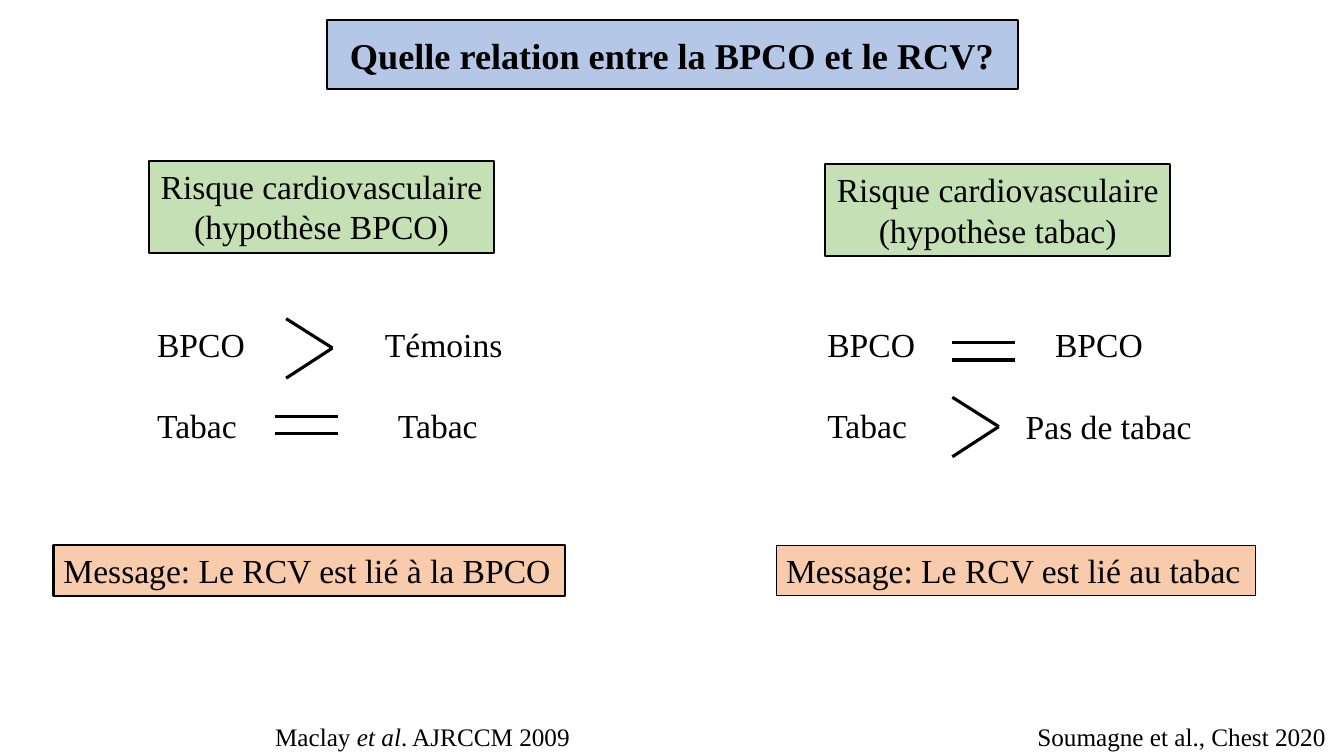
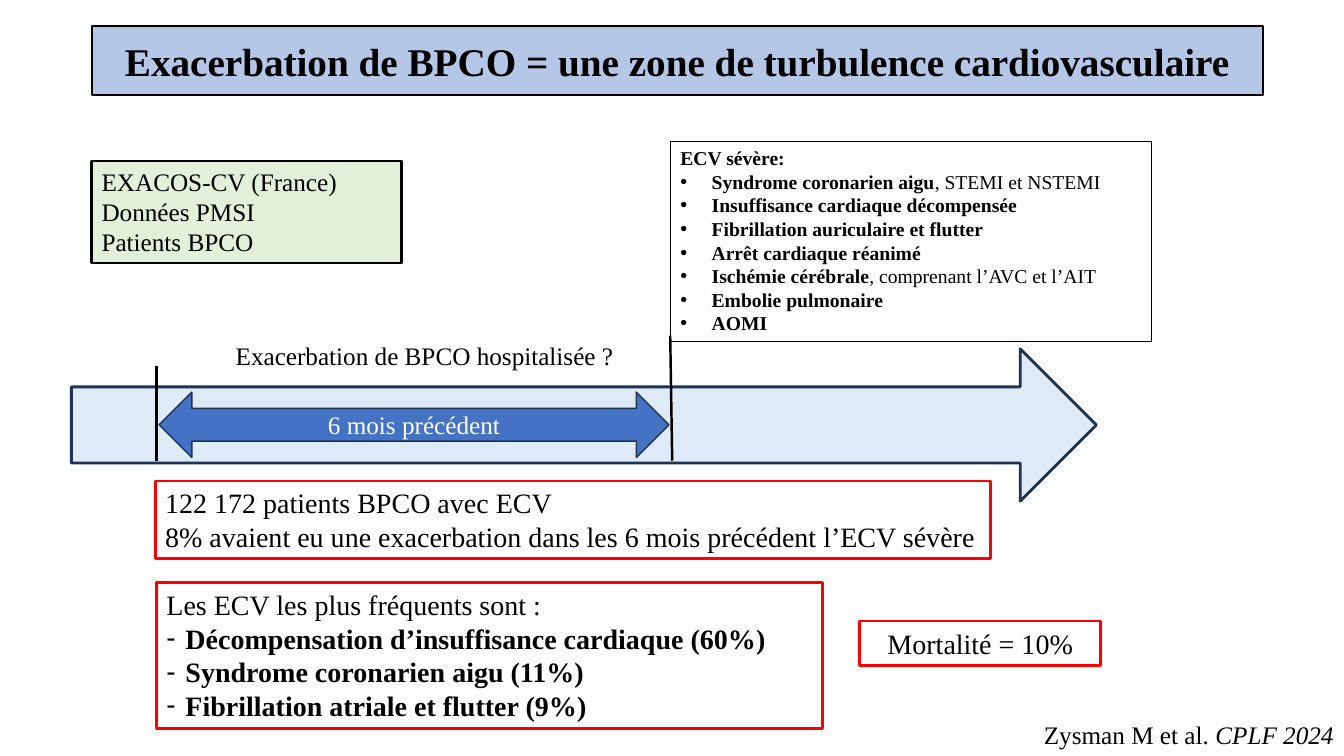
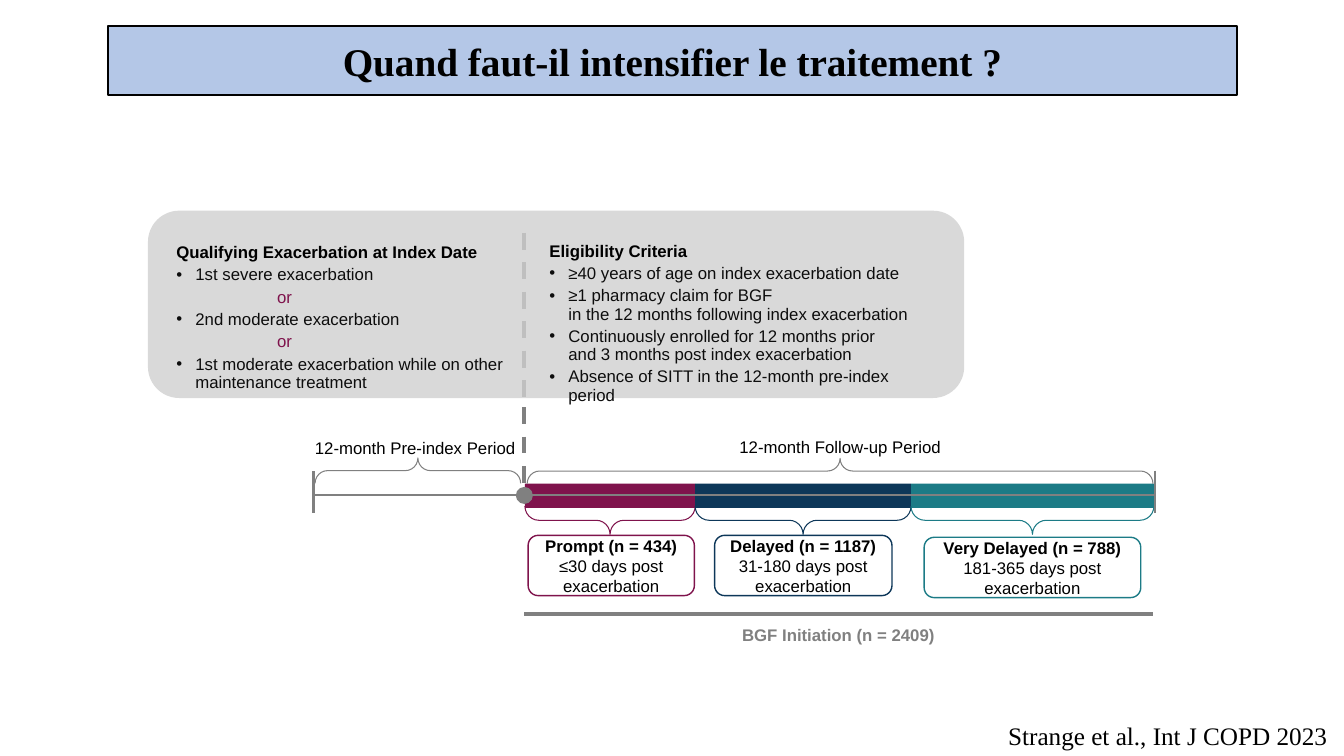
import copy
from lxml import etree
from pptx import Presentation
from pptx.dml.color import RGBColor
from pptx.enum import dml, shapes, text
from pptx.oxml import ns
from pptx.util import Cm, Pt

COLOURS = {
    "black": "000000", "white": "FFFFFF", "ink": "0D0D0D", "grey": "808080",
    "silver": "BFBFBF", "panel": "D9D9D9", "title": "B4C7E7", "green": "C5E0B4",
    "mint": "E2F0D9", "peach": "F8CBAD", "sky": "DEEBF7", "blue": "4472C4",
    "navy": "1E3256", "red": "FF0000", "plum": "7F134C", "marine": "0D3759",
    "teal": "1C7B86",
}
RGB = {name: RGBColor.from_string(code) for name, code in COLOURS.items()}
SERIF, SANS = "Times New Roman", "Arial"
SHAPE = shapes.MSO_SHAPE
LEFT, CENTER, RIGHT = text.PP_ALIGN.LEFT, text.PP_ALIGN.CENTER, text.PP_ALIGN.RIGHT


def draw(page, kind, place, fill=None, line=None, weight=1, dash=False):
    """Draw a line (two points), a text box or a preset shape (left, top, width, height)."""
    place = [Cm(length) for length in place]
    if kind == "text":
        return page.shapes.add_textbox(*place)
    if kind == "line":
        box = page.shapes.add_connector(shapes.MSO_CONNECTOR.STRAIGHT, *place)
        etree.SubElement(box.element.spPr, ns.qn("a:effectLst"))
    else:
        box = page.shapes.add_shape(kind, *place)
        box.shadow.inherit = False
        if fill:
            box.fill.solid()
            box.fill.fore_color.rgb = RGB[fill]
        else:
            box.fill.background()
    if line:
        box.line.color.rgb = RGB[line]
        box.line.width = Pt(weight)
    else:
        box.line.fill.background()
    if dash:
        box.line.dash_style = dml.MSO_LINE.DASH
    return box


def write(box, paragraphs, size, font=SERIF, align=LEFT, colour="black", wrap=True,
          anchor=text.MSO_ANCHOR.TOP, bullet=None, indent=0, spacing=1, after=0):
    """Write paragraphs of runs (words, marks...); bullets start after the heading."""
    frame = box.text_frame
    frame.auto_size = text.MSO_AUTO_SIZE.NONE
    frame.word_wrap = wrap
    frame.vertical_anchor = anchor
    for number, runs in enumerate(paragraphs):
        para = frame.add_paragraph() if number else frame.paragraphs[0]
        para.alignment = align
        para.line_spacing, para.space_before, para.space_after = spacing, Pt(0), Pt(after)
        aside = "plum" in runs[0]
        listed = bullet and number and not aside
        margin = 2.54 if aside else indent if listed else 0
        layout = para._p.get_or_add_pPr()
        layout.set("marL", str(Cm(margin)))
        layout.set("indent", str(Cm(-indent if listed else 0)))
        if listed:
            etree.SubElement(layout, ns.qn("a:buFont")).set("typeface", SANS)
            etree.SubElement(layout, ns.qn("a:buChar")).set("char", bullet)
        else:
            etree.SubElement(layout, ns.qn("a:buNone"))
        for words, *marks in runs:
            if words == "\n":
                para.add_line_break()
                para._p[-1].append(copy.deepcopy(span._r.rPr))
                continue
            span = para.add_run()
            span.text = words
            span.font.name, span.font.size = font, Pt(size)
            span.font.bold, span.font.italic = "bold" in marks, "italic" in marks
            tint = next((mark for mark in marks if mark in RGB), colour)
            span.font.color.rgb = RGB[tint]


deck = Presentation()
deck.slide_width, deck.slide_height = Cm(33.87), Cm(19.05)

# Pages and title bands
TITLE_ONLY, TWO_LISTS = 5, 3
pages = []
for layout_number, place, size, words in [
    (TITLE_ONLY, (8.23, 0.51, 17.42, 1.73), 25.9, "Quelle relation entre la BPCO et le RCV?"),
    (TWO_LISTS, (2.31, 0.66, 29.51, 1.73), 28,
     "Exacerbation de BPCO = une zone de turbulence cardiovasculaire"),
    (TWO_LISTS, (2.72, 0.66, 28.45, 1.73), 28, "Quand faut-il intensifier le traitement ?"),
]:
    page = deck.slides.add_slide(deck.slide_layouts[layout_number])
    pages.append(page)
    title = page.shapes.title
    title.left, title.top, title.width, title.height = [Cm(length) for length in place]
    title.fill.solid()
    title.fill.fore_color.rgb = RGB["title"]
    title.line.color.rgb = RGB["black"]
    title.line.width = Pt(1.5)
    write(title, [[(words, "bold")]], size, align=CENTER, anchor=text.MSO_ANCHOR.MIDDLE)
relation, turbulence, treatment = pages

# Lists in the body placeholders
severe_events = [
    [("ECV sévère:", "bold")],
    [("Syndrome coronarien aigu", "bold"), (", STEMI et NSTEMI",)],
    [("Insuffisance cardiaque décompensée", "bold")],
    [("Fibrillation auriculaire et flutter", "bold")],
    [("Arrêt cardiaque réanimé", "bold")],
    [("Ischémie cérébrale", "bold"), (", comprenant l’AVC et l’AIT",)],
    [("Embolie pulmonaire", "bold")],
    [("AOMI", "bold")],
]
frequent_events = [
    [("Les ECV les plus fréquents sont :",)],
    [("Décompensation d’insuffisance cardiaque (60%)", "bold")],
    [("Syndrome coronarien aigu (11%)", "bold")],
    [("Fibrillation atriale et flutter (9%)", "bold")],
]
qualifying = [
    [("Qualifying Exacerbation at Index Date", "bold", "black")],
    [("1st severe exacerbation",)],
    [("or", "plum")],
    [("2nd moderate exacerbation",)],
    [("or", "plum")],
    [("1st moderate exacerbation while on other maintenance treatment",)],
]
eligibility = [
    [("Eligibility Criteria", "bold", "black")],
    [("≥40 years of age on index exacerbation date",)],
    [("≥1 pharmacy claim for BGF",), ("\n",), ("in the 12 months following index exacerbation",)],
    [("Continuously enrolled for 12 months prior",), ("\n",),
     ("and 3 months post index exacerbation",)],
    [("Absence of SITT in the 12-month pre-index period",)],
]
criteria = dict(size=12, font=SANS, colour="ink", bullet="•", indent=0.48, spacing=0.9, after=3)
for page, index, place, outline, weight, paragraphs, style in [
    (turbulence, 1, (16.89, 3.56, 12.12, 5.05), "black", 0.75, severe_events,
     dict(size=14, bullet="•", indent=0.79)),
    (turbulence, 2, (3.94, 14.68, 16.79, 3.68), "red", 2.5, frequent_events,
     dict(size=20, bullet="-", indent=0.48)),
    (treatment, 1, (4.19, 6.02, 9.04, 4.01), None, 0, qualifying, criteria),
    (treatment, 2, (13.59, 5.99, 10.36, 3.91), None, 0, eligibility, criteria),
]:
    box = page.placeholders[index]
    box.left, box.top, box.width, box.height = [Cm(length) for length in place]
    if outline:
        box.line.color.rgb = RGB[outline]
        box.line.width = Pt(weight)
    write(box, paragraphs, **style)

# Relation: one column per hypothesis
for hypothesis, header, message, message_place, message_weight, terms, equal, greater in [
    ("(hypothèse BPCO)", (3.76, 4.06), "Message: Le RCV est lié à la BPCO",
     (1.35, 13.74, 12.9, 1.27), 1.5,
     [("BPCO", 3.71, 8.05, 2.74), ("Témoins", 9.45, 8.05, 3.5),
      ("Tabac", 3.71, 10.08, 2.54), ("Tabac", 9.78, 10.08, 2.54)],
     (6.93, 10.49), (7.21, 8.03)),
    ("(hypothèse tabac)", (20.8, 4.14), "Message: Le RCV est lié au tabac",
     (19.56, 13.74, 12.07, 1.27), 0.75,
     [("BPCO", 20.6, 8.05, 2.74), ("BPCO", 26.34, 8.05, 2.74),
      ("Tabac", 20.6, 10.08, 2.54), ("Pas de tabac", 25.6, 10.11, 4.72)],
     (24, 8.64), (24, 10.01)),
]:
    box = draw(relation, SHAPE.RECTANGLE, (*header, 8.69, 2.31), "green", "black", 1.5)
    write(box, [[("Risque cardiovasculaire",)], [(hypothesis,)]], 24, align=CENTER, wrap=False)
    box = draw(relation, SHAPE.RECTANGLE, message_place, "peach", "black", message_weight)
    write(box, [[(message,)]], 24, wrap=False)
    for words, left, top, width in terms:
        write(draw(relation, "text", (left, top, width, 1.27)), [[(words,)]], 24, wrap=False)
    for drop in (0, 0.43):
        x, y = equal[0], equal[1] + drop
        draw(relation, "line", (x, y, x + 1.59, y), line="black", weight=2.25)
    for drop in (0, 1.5):
        x, y = greater
        draw(relation, "line", (x, y + drop, x + 1.17, y + 0.74), line="black", weight=2.25)

# Turbulence: time arrows and their limits
draw(turbulence, SHAPE.RIGHT_ARROW, (1.8, 8.79, 25.83, 3.84), "sky", "navy", 2)
box = draw(turbulence, SHAPE.LEFT_RIGHT_ARROW, (4.01, 9.88, 12.85, 1.65), "blue", "navy", 1)
write(box, [[("6 mois précédent",)]], 18, align=CENTER, colour="white",
      anchor=text.MSO_ANCHOR.MIDDLE)
for limit in [(16.89, 8.46, 16.94, 11.61), (3.94, 9.22, 3.94, 11.61)]:
    draw(turbulence, "line", limit, line="black", weight=1.75)
box = draw(turbulence, "text", (5.69, 8.46, 10.13, 1.02))
write(box, [[("Exacerbation de BPCO hospitalisée ?",)]], 18, wrap=False)

# Turbulence: study and results
for place, fill, outline, size, align, lines in [
    ((2.31, 4.06, 7.8, 2.57), "mint", "black", 18, LEFT,
     ["EXACOS-CV (France)", "Données PMSI", "Patients BPCO"]),
    ((3.91, 12.12, 21.06, 1.96), None, "red", 20, LEFT,
     ["122 172 patients BPCO avec ECV",
      "8% avaient eu une exacerbation dans les 6 mois précédent l’ECV sévère"]),
    ((21.67, 15.65, 6.07, 1.12), None, "red", 20, CENTER, ["Mortalité = 10%"]),
]:
    box = draw(turbulence, SHAPE.RECTANGLE, place, fill, outline, 2)
    write(box, [[(words,)] for words in lines], size, align=align, wrap=False)

# Treatment: panel behind the lists, index date line
panel = draw(treatment, SHAPE.ROUNDED_RECTANGLE, (3.73, 5.31, 20.57, 4.72), "panel")
treatment.shapes[0].element.addprevious(panel.element)
draw(treatment, "line", (13.21, 5.87, 13.21, 10.06), line="silver", weight=3, dash=True)
draw(treatment, "line", (13.21, 10.26, 13.21, 12.5), line="grey", weight=3, dash=True)

# Treatment: delay bars with their cards
braces = [(10.53, 11.86, 0.64, 5.18, 90, "grey"), (21.17, 11.87, 0.64, 15.77, 90, "grey")]
bar_left = 13.23
for colour, bar_width, card_place, heading, delay in [
    ("plum", 4.29, (13.31, 13.49, 4.19, 1.52), "Prompt (n = 434)", "≤30 days post exacerbation"),
    ("marine", 5.44, (18.01, 13.49, 4.47, 1.52), "Delayed (n = 1187)",
     "31-180 days post exacerbation"),
    ("teal", 6.12, (23.29, 13.54, 5.46, 1.52), "Very Delayed (n = 788)",
     "181-365 days post exacerbation"),
]:
    draw(treatment, SHAPE.RECTANGLE, (bar_left, 12.19, bar_width, 0.61), colour)
    braces.append((bar_left + bar_width / 2, 13.11, 0.71, bar_width, 270, colour))
    card = draw(treatment, SHAPE.ROUNDED_RECTANGLE, card_place, "white", colour, 1)
    write(card, [[(heading, "bold")], [(delay,)]], 12, SANS, CENTER,
          anchor=text.MSO_ANCHOR.MIDDLE)
    bar_left += bar_width

# Treatment: braces, given by centre, depth and span
for x, y, depth, span_width, turn, colour in braces:
    place = (x - depth / 2, y - span_width / 2, depth, span_width)
    brace = draw(treatment, SHAPE.LEFT_BRACE, place, None, colour, 0.75)
    brace.adjustments[0], brace.adjustments[1] = 0.492, 0.5
    brace.rotation = turn

# Treatment: time axis and labels
for ends, weight in [
    ((29.11, 11.86, 29.11, 12.93), 1.5), ((7.9, 11.88, 7.9, 12.93), 1.5),
    ((29.11, 12.47, 7.92, 12.47), 1.5), ((13.21, 15.47, 29.06, 15.47), 3),
]:
    draw(treatment, "line", ends, line="grey", weight=weight)
draw(treatment, SHAPE.OVAL, (13, 12.27, 0.43, 0.43), "grey")
for place, run in [
    ((7.62, 10.9, 5.69, 0.76), ("12-month Pre-index Period",)),
    ((18.24, 10.87, 5.87, 0.76), ("12-month Follow-up Period",)),
    ((15.11, 15.62, 12.04, 0.76), ("BGF Initiation (n = 2409)", "bold", "grey")),
]:
    write(draw(treatment, "text", place), [[run]], 12, SANS, CENTER)

# Sources at the foot of each page
for page, place, runs in [
    (relation, (6.1, 18.06, 8.51, 1.02),
     [("Maclay ",), ("et al", "italic"), (". AJRCCM 2009",)]),
    (relation, (25.15, 18.06, 8.51, 1.02), [("Soumagne et al., Chest 2020",)]),
    (turbulence, (24.64, 18.01, 9.22, 1.02),
     [("Zysman M et al. ",), ("CPLF 2024", "italic")]),
    (treatment, (17.45, 18.03, 16.25, 1.02), [("Strange et al., Int J COPD 2023",)]),
]:
    write(draw(page, "text", place), [runs], 18, align=RIGHT)

deck.save("out.pptx")
